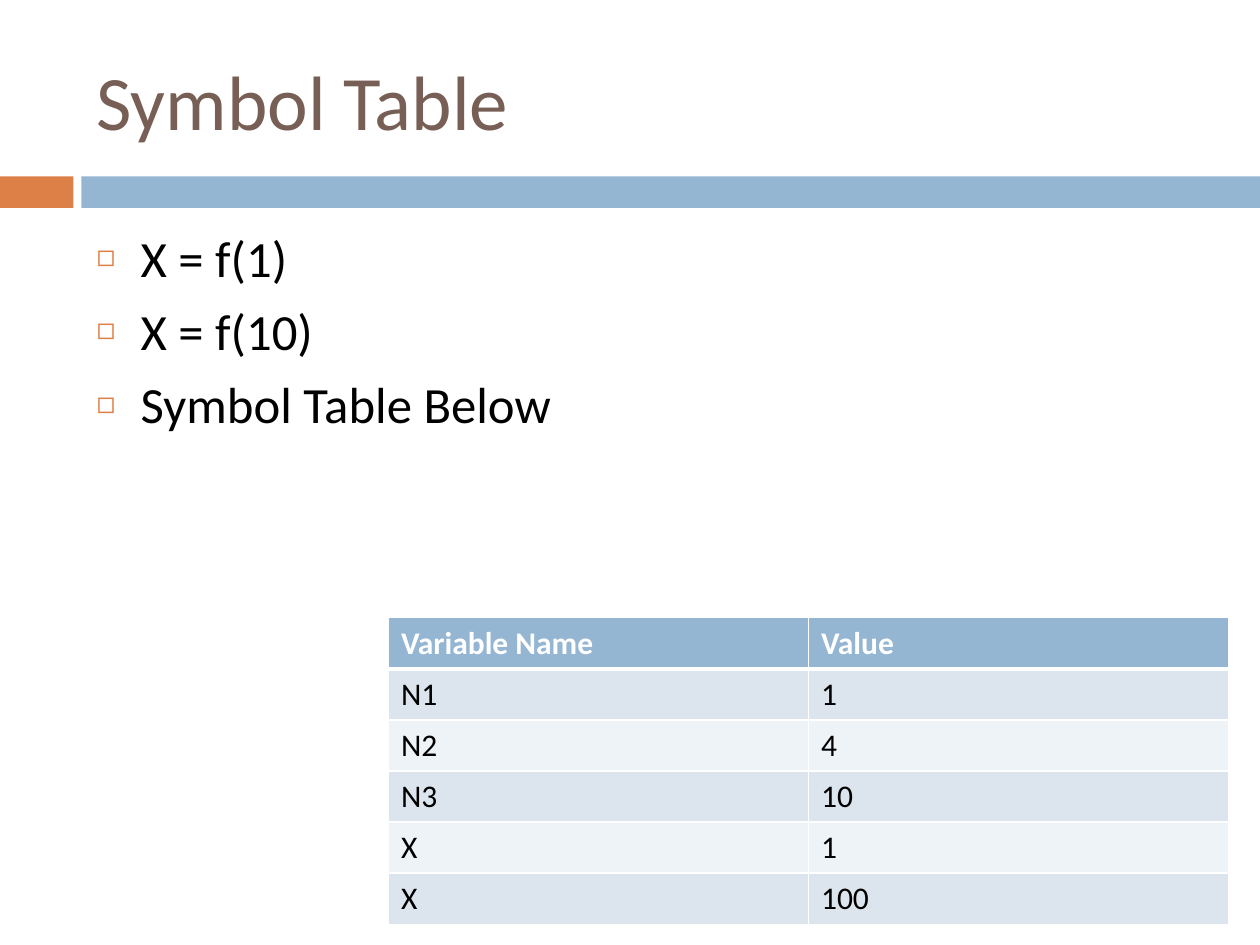
from dataclasses import dataclass

from pptx import Presentation
from pptx.dml.color import RGBColor
from pptx.enum.shapes import MSO_SHAPE as ShapeKind
from pptx.enum.text import MSO_ANCHOR as Anchor, MSO_AUTO_SIZE as AutoSize, PP_ALIGN as Align
from pptx.oxml.ns import qn
from pptx.util import Pt
from lxml.etree import SubElement, Element


@dataclass(frozen=True)
class Theme:
    font: str = "Calibri"
    title_size: float = 44
    body_size: float = 29
    table_size: float = 18
    title: str = "775F55"
    text: str = "000000"
    white: str = "FFFFFF"
    accent: str = "DD8047"
    blue: str = "94B6D2"
    bands: tuple[str, str] = ("DCE5EE", "EEF3F7")


@dataclass(frozen=True)
class Box:
    left: float
    top: float
    width: float
    height: float

    def lengths(self) -> tuple:
        return Pt(self.left), Pt(self.top), Pt(self.width), Pt(self.height)


@dataclass(frozen=True)
class Bar:
    box: Box
    color: str


THEME = Theme()
BARS = [
    Bar(Box(0, 100.8, 42, 18), THEME.accent),
    Bar(Box(46.5, 100.8, 673.5, 18), THEME.blue),
]
TITLE_BOX = Box(48, 18, 642, 78)
BODY_BOX = Box(48, 126, 642, 354)
TABLE_BOX = Box(222, 353, 480, 175.2)
BULLETS = ["X = f(1)", "X = f(10)", "Symbol Table Below"]
SYMBOLS = [
    ("Variable Name", "Value"),
    ("N1", "1"),
    ("N2", "4"),
    ("N3", "10"),
    ("X", "1"),
    ("X", "100"),
]


def add_run(paragraph, text: str, size: float, color: str, bold: bool = False) -> None:
    run = paragraph.add_run()
    run.text = text
    run.font.name = THEME.font
    run.font.size = Pt(size)
    run.font.bold = bold
    run.font.color.rgb = RGBColor.from_string(color)


def place(shape, box: Box) -> None:
    shape.left, shape.top, shape.width, shape.height = box.lengths()


def add_bar(slide, bar: Bar) -> None:
    shape = slide.shapes.add_shape(ShapeKind.RECTANGLE, *bar.box.lengths())
    shape.shadow.inherit = False
    shape.fill.solid()
    shape.fill.fore_color.rgb = RGBColor.from_string(bar.color)
    shape.line.fill.background()


def set_bullet(paragraph) -> None:
    properties = paragraph._p.get_or_add_pPr()
    properties.set("marL", str(Pt(25.2)))
    properties.set("indent", str(-Pt(25.2)))
    color = SubElement(properties, qn("a:buClr"))
    SubElement(color, qn("a:srgbClr"), val=THEME.accent)
    SubElement(properties, qn("a:buSzPct"), val="60000")
    SubElement(properties, qn("a:buChar"), char="◻")


def set_borders(cell, bottom_width: float) -> None:
    properties = cell._tc.get_or_add_tcPr()
    widths = {"a:lnL": 1, "a:lnR": 1, "a:lnT": 1, "a:lnB": bottom_width}
    # Border lines must come before the cell's fill
    for position, (tag, width) in enumerate(widths.items()):
        line = Element(qn(tag), w=str(Pt(width)))
        fill = SubElement(line, qn("a:solidFill"))
        SubElement(fill, qn("a:srgbClr"), val=THEME.white)
        properties.insert(position, line)


def fill_title(shape) -> None:
    place(shape, TITLE_BOX)
    frame = shape.text_frame
    frame.auto_size = AutoSize.NONE
    frame.vertical_anchor = Anchor.MIDDLE
    paragraph = frame.paragraphs[0]
    paragraph.alignment = Align.LEFT
    add_run(paragraph, "Symbol Table", THEME.title_size, THEME.title)


def fill_body(shape) -> None:
    place(shape, BODY_BOX)
    frame = shape.text_frame
    frame.auto_size = AutoSize.NONE
    for index, text in enumerate(BULLETS):
        paragraph = frame.add_paragraph() if index else frame.paragraphs[0]
        paragraph.space_before = Pt(7)
        set_bullet(paragraph)
        add_run(paragraph, text, THEME.body_size, THEME.text)


def add_symbol_table(slide) -> None:
    row_count, column_count = len(SYMBOLS), len(SYMBOLS[0])
    table = slide.shapes.add_table(row_count, column_count, *TABLE_BOX.lengths()).table
    for row_index, values in enumerate(SYMBOLS):
        header = row_index == 0
        fill = THEME.blue if header else THEME.bands[(row_index - 1) % 2]
        color = THEME.white if header else THEME.text
        for column_index, value in enumerate(values):
            cell = table.cell(row_index, column_index)
            cell.fill.solid()
            cell.fill.fore_color.rgb = RGBColor.from_string(fill)
            set_borders(cell, 3 if header else 1)
            paragraph = cell.text_frame.paragraphs[0]
            add_run(paragraph, value, THEME.table_size, color, header)


def main() -> None:
    presentation = Presentation()
    presentation.slide_width, presentation.slide_height = Pt(720), Pt(540)
    slide = presentation.slides.add_slide(presentation.slide_layouts[1])

    # Title and list
    fill_title(slide.shapes.title)
    fill_body(slide.placeholders[1])

    # Divider under the title
    for bar in BARS:
        add_bar(slide, bar)

    # Variables and their values
    add_symbol_table(slide)

    presentation.save("out.pptx")


if __name__ == "__main__":
    main()
